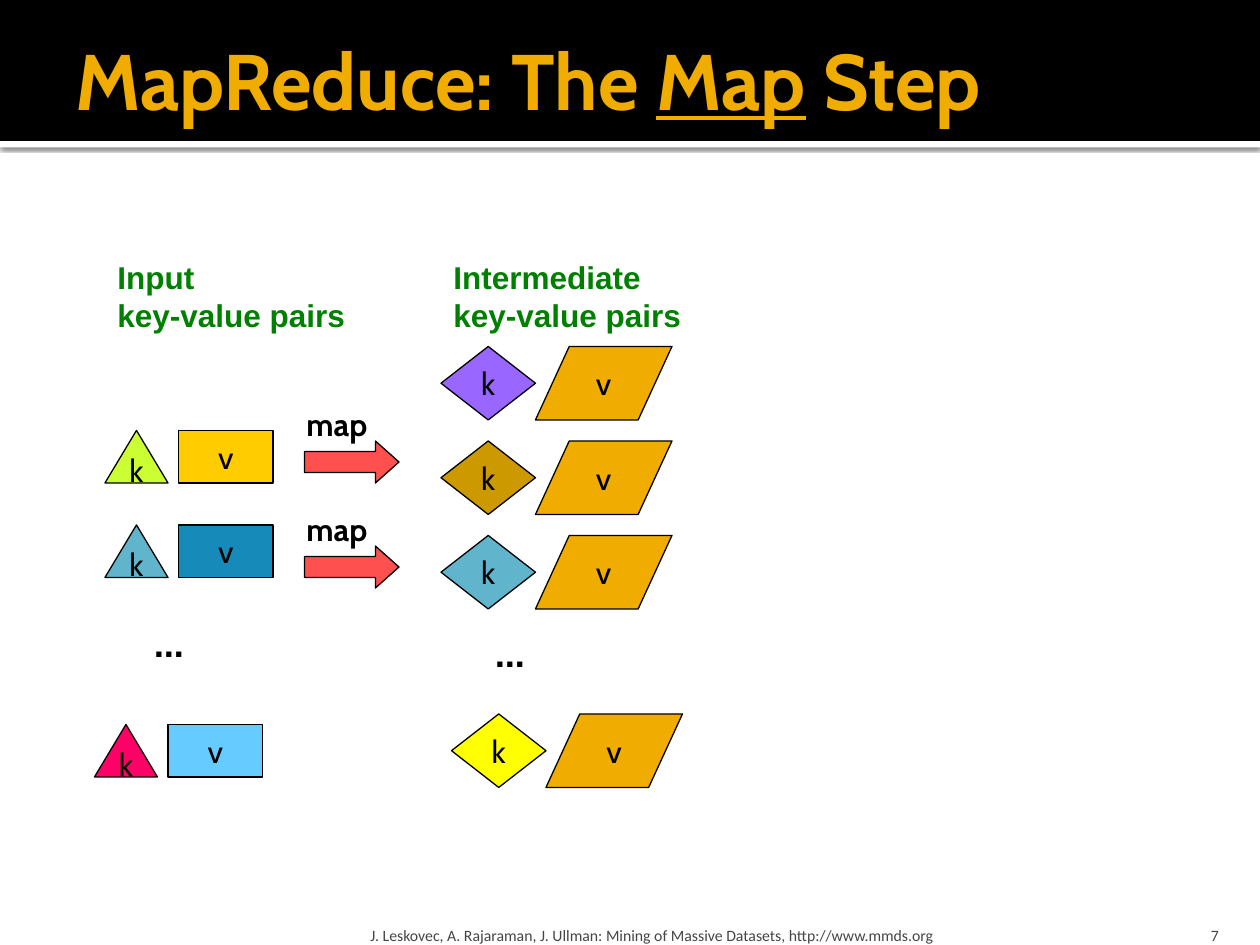
from lxml.etree import SubElement
from pptx import Presentation
from pptx.dml.color import RGBColor
from pptx.enum.shapes import MSO_SHAPE
from pptx.enum.text import MSO_ANCHOR, MSO_AUTO_SIZE, PP_ALIGN
from pptx.oxml import parse_xml
from pptx.oxml.ns import nsdecls, qn
from pptx.util import Pt

BLACK = RGBColor(0x00, 0x00, 0x00)
WHITE = RGBColor(0xFF, 0xFF, 0xFF)
AMBER = RGBColor(0xF0, 0xAD, 0x00)
GREEN = RGBColor(0x00, 0x80, 0x00)
RED = RGBColor(0xFF, 0x50, 0x50)
GRAY = RGBColor(0x45, 0x45, 0x45)
TEAL = RGBColor(0x60, 0xB5, 0xCC)
BLUE = RGBColor(0x16, 0x8B, 0xBA)
SKY = RGBColor(0x66, 0xCC, 0xFF)
GOLD = RGBColor(0xFF, 0xCC, 0x00)
LIME = RGBColor(0xCC, 0xFF, 0x33)
PINK = RGBColor(0xFF, 0x00, 0x66)
PURPLE = RGBColor(0x99, 0x66, 0xFF)
OCHRE = RGBColor(0xCC, 0x99, 0x00)
YELLOW = RGBColor(0xFF, 0xFF, 0x00)

TITLE = [("MapReduce: The ", False), ("Map", True), (" Step", False)]
HEADINGS = [(60, ["Input", "key-value pairs"]), (252, ["Intermediate", "key-value pairs"])]
INPUT_PAIRS = [(60, 246, LIME, GOLD), (60, 300, TEAL, BLUE), (54, 414, PINK, SKY)]
INTERMEDIATE_PAIRS = [(252, 198, PURPLE), (252, 252, OCHRE), (252, 306, TEAL), (258, 408, YELLOW)]
MAP_STEPS = [228, 288]
ELLIPSES = [(81, 348), (276, 354)]
CREDIT = "J. Leskovec, A. Rajaraman, J. Ullman: Mining of Massive Datasets, http://www.mmds.org"
PAGE_NUMBER = "7"

LETTER = {"size": Pt(18), "name": "Cabin"}
LABEL = {"size": Pt(18), "name": "Cabin", "bold": True}
DOTS = {"size": Pt(24), "name": "Cabin", "bold": True}
HEADING = {"size": Pt(18), "name": "Arial", "bold": True}
HEADLINE = {"size": Pt(45), "name": "Cabin", "bold": True}
SMALL = {"size": Pt(9), "name": "Calibri"}


def add_span(para, text, font, color):
    span = para.add_run()
    span.text = text
    for name, value in font.items():
        setattr(span.font, name, value)
    span.font.color.rgb = color


def add_figure(page, kind, place, fill, outlined=True, letter=None, adjustments=()):
    figure = page.shapes.add_shape(kind, *map(Pt, place))
    figure.shadow.inherit = False
    figure.fill.solid()
    figure.fill.fore_color.rgb = fill
    for index, value in enumerate(adjustments):
        figure.adjustments[index] = value
    if outlined:
        figure.line.color.rgb = BLACK
        figure.line.width = Pt(0.75)
    else:
        figure.line.fill.background()
    if letter:
        frame = figure.text_frame
        frame.word_wrap = False
        frame.vertical_anchor = MSO_ANCHOR.MIDDLE
        frame.paragraphs[0].alignment = PP_ALIGN.CENTER
        add_span(frame.paragraphs[0], letter, LETTER, BLACK)
    return figure


def add_text(page, place, lines, font, color, align=PP_ALIGN.LEFT, **frame_format):
    box = page.shapes.add_textbox(*map(Pt, place))
    frame = box.text_frame
    for name, value in frame_format.items():
        setattr(frame, name, value)
    for index, line in enumerate(lines):
        para = frame.add_paragraph() if index else frame.paragraphs[0]
        para.alignment = align
        for text, underline in line:
            add_span(para, text, {**font, "underline": underline}, color)


def add_label(page, place, lines, font, color):
    add_text(page, place, [[(line, False)] for line in lines], font, color,
             word_wrap=False, auto_size=MSO_AUTO_SIZE.SHAPE_TO_FIT_TEXT)


def add_header(page):
    strip = add_figure(page, MSO_SHAPE.RECTANGLE, (0, 80.6, 720, 3.6), WHITE, outlined=False)
    effects = strip._element.spPr.find(qn("a:effectLst"))
    effects.append(parse_xml(
        f'<a:outerShdw {nsdecls("a")} blurRad="{Pt(2.5)}" dist="{Pt(0.8)}" dir="5400000" '
        'algn="tl" rotWithShape="0"/>'))
    color = SubElement(effects[0], qn("a:srgbClr"), val="000000")
    SubElement(color, qn("a:alpha"), val="60000")
    add_figure(page, MSO_SHAPE.RECTANGLE, (0, 0, 720, 80.6), BLACK, outlined=False)
    add_text(page, (36, 6, 648, 78), [TITLE], HEADLINE, AMBER, word_wrap=True,
             vertical_anchor=MSO_ANCHOR.MIDDLE, margin_right=Pt(3.6))


def add_footer(page):
    footer = {"word_wrap": True, "vertical_anchor": MSO_ANCHOR.BOTTOM, "margin_bottom": 0}
    add_text(page, (208, 518.4, 433.4, 21.6), [[(CREDIT, False)]], SMALL, GRAY,
             margin_left=Pt(3.6), margin_right=Pt(3.6), **footer)
    add_text(page, (646, 518.4, 57.6, 21.6), [[(PAGE_NUMBER, False)]], SMALL, GRAY,
             align=PP_ALIGN.RIGHT, **footer)


def main():
    deck = Presentation()
    deck.slide_width, deck.slide_height = Pt(720), Pt(540)
    page = deck.slides.add_slide(deck.slide_layouts[6])
    add_header(page)
    for left, lines in HEADINGS:
        add_label(page, (left, 144, 146, 51), lines, HEADING, GREEN)
    for left, top, key_color, value_color in INPUT_PAIRS:
        add_figure(page, MSO_SHAPE.RECTANGLE, (left + 42, top, 54, 30), value_color, letter="v")
        add_figure(page, MSO_SHAPE.ISOSCELES_TRIANGLE, (left, top, 36, 30), key_color, letter="k")
    for top in MAP_STEPS:
        add_figure(page, MSO_SHAPE.RIGHT_ARROW, (174, top + 24, 54, 24), RED,
                   adjustments=(0.5, 0.56))
        add_label(page, (168, top, 49.7, 29), ["map"], LABEL, BLACK)
    for left, top, key_color in INTERMEDIATE_PAIRS:
        add_figure(page, MSO_SHAPE.DIAMOND, (left, top, 54, 42), key_color, letter="k")
        add_figure(page, MSO_SHAPE.PARALLELOGRAM, (left + 54, top, 78, 42), AMBER, letter="v",
                   adjustments=(0.46,))
    for left, top in ELLIPSES:
        add_label(page, (left, top, 39.6, 36), ["…"], DOTS, BLACK)
    add_footer(page)
    deck.save("out.pptx")


if __name__ == "__main__":
    main()
